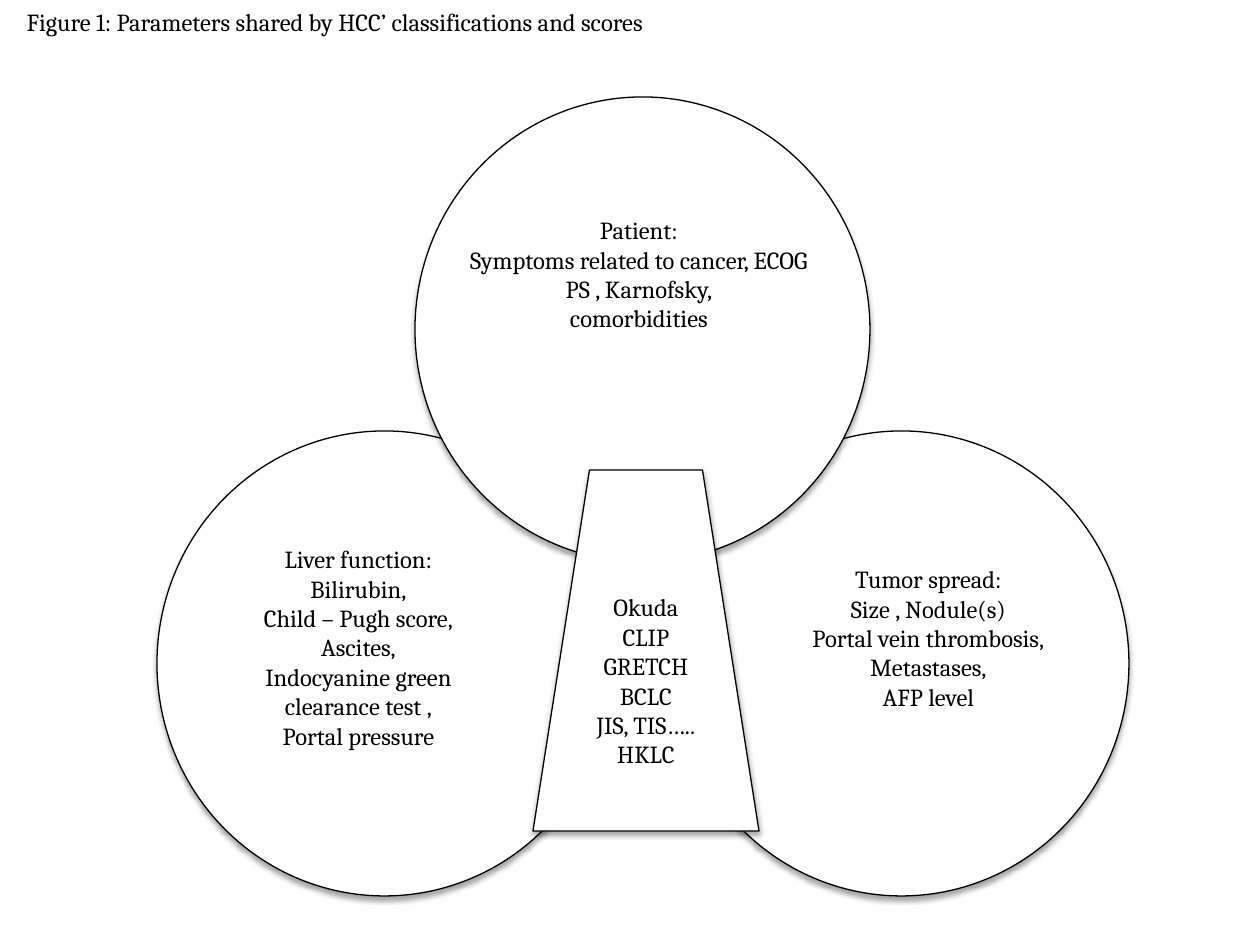
from dataclasses import dataclass
from lxml import etree
from pptx import Presentation
from pptx import util as u
from pptx.dml import color
from pptx.enum import shapes, text
from pptx.oxml import ns


@dataclass(frozen=True)
class Theme:
    ink: str = "000000"
    paper: str = "FFFFFF"
    font: str = "Cambria"
    size: float = 14
    line: float = 0.75


LOOK = Theme()
CIRCLE = (455, 465)
PLACES = [
    ((157, 431), (46, 107, 311, 220),
     ["Liver function:", "Bilirubin,", "Child – Pugh score,", "Ascites,",
      "Indocyanine green clearance test ,", "Portal pressure"]),
    ((674, 431), (85, 127, 339, 190),
     ["Tumor spread:", "Size , Nodule(s)", "Portal vein thrombosis,",
      "Metastases,", "AFP level"]),
    ((415, 97), (35, 112, 378, 131),
     ["Patient:", "Symptoms related to cancer, ECOG PS , Karnofsky,",
      "comorbidities"]),
]
SCORES = ["Okuda", "CLIP", "GRETCH", "BCLC", "JIS, TIS…..", "HKLC"]


def px(n):
    return u.Emu(round(n * u.Inches(1) / 126))


def rgb(code):
    return color.RGBColor.from_string(code)


def assign(item, values):
    for name, value in values.items():
        setattr(item, name, value)


def write(shape, lines, align=text.PP_ALIGN.CENTER,
          anchor=text.MSO_ANCHOR.TOP):
    frame = shape.text_frame
    frame.text = "\n".join(lines)
    assign(frame, {"word_wrap": True, "vertical_anchor": anchor,
                   "auto_size": text.MSO_AUTO_SIZE.NONE})
    for para in frame.paragraphs:
        para.alignment = align
        for run in para.runs:
            assign(run.font, {"name": LOOK.font, "size": u.Pt(LOOK.size)})
            run.font.color.rgb = rgb(LOOK.ink)


def shade(shape):
    shape.shadow.inherit = False
    group = shape.element.spPr.find(ns.qn("a:effectLst"))
    outer = etree.SubElement(group, ns.qn("a:outerShdw"), {
        "blurRad": str(u.Pt(3.1)), "dist": str(u.Pt(1.8)),
        "dir": "5400000", "rotWithShape": "0"})
    tint = etree.SubElement(outer, ns.qn("a:srgbClr"), val=LOOK.ink)
    etree.SubElement(tint, ns.qn("a:alpha"), val="35000")


def draw(slide, kind, box):
    shape = slide.shapes.add_shape(kind, *map(px, box))
    shape.fill.solid()
    shape.fill.fore_color.rgb = rgb(LOOK.paper)
    shape.line.color.rgb = rgb(LOOK.ink)
    shape.line.width = u.Pt(LOOK.line)
    shade(shape)
    return shape


def circle(slide, box, note, lines):
    draw(slide, shapes.MSO_SHAPE.OVAL, box)
    left, top, wide, high = note
    area = (box[0] + left, box[1] + top, wide, high)
    write(slide.shapes.add_textbox(*map(px, area)), lines)


def centre(slide, box, lines):
    shape = draw(slide, shapes.MSO_SHAPE.TRAPEZOID, box)
    write(shape, lines, anchor=text.MSO_ANCHOR.MIDDLE)


def title(slide, box, words):
    shape = slide.shapes.title
    assign(shape, dict(zip(("left", "top", "width", "height"), map(px, box))))
    write(shape, [words], text.PP_ALIGN.LEFT)


def main():
    deck = Presentation()
    assign(deck, {"slide_width": px(1260), "slide_height": px(945)})
    slide = deck.slides.add_slide(deck.slide_layouts[5])
    title(slide, (14, 1, 1220, 43),
          "Figure 1: Parameters shared by HCC’ classifications and scores")
    for spot, note, lines in PLACES:
        circle(slide, spot + CIRCLE, note, lines)
    centre(slide, (533, 470, 226, 361), SCORES)
    deck.save("out.pptx")


if __name__ == "__main__":
    main()
